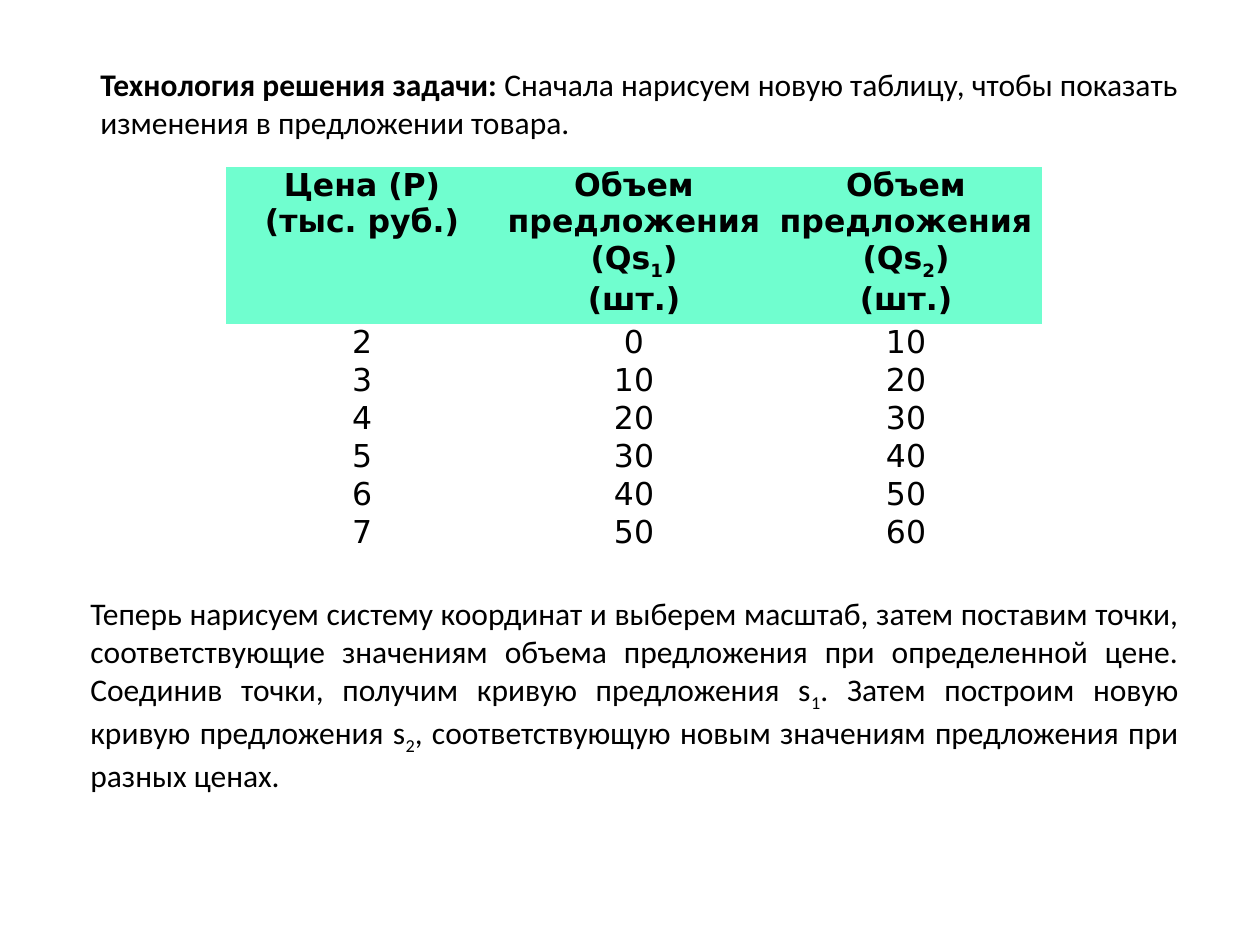
from dataclasses import dataclass

import pptx
import pptx.dml.color
import pptx.enum.text
import pptx.util

PX_PER_INCH = 126
BLACK = pptx.dml.color.RGBColor(0x00, 0x00, 0x00)
MINT = pptx.dml.color.RGBColor(0x70, 0xFE, 0xCF)
ALIGN = pptx.enum.text.PP_ALIGN
TEXT_SIZE = pptx.util.Pt(18)
BODY_FONT = "Calibri"
TABLE_FONT = "DejaVu Sans"
PLAIN_TABLE_STYLE = "{2D5ABB26-0587-4C30-8999-92F81FD0307C}"

TABLE_LEFT, TABLE_TOP = 226, 167
COLUMN_WIDTH, HEADER_HEIGHT, ROW_HEIGHT = 272, 157, 38
SUPPLY_SHIFT = 10


@dataclass(frozen=True)
class Piece:
    text: str
    bold: bool = False
    subscript: bool = False


@dataclass(frozen=True)
class Passage:
    left: int
    top: int
    width: int
    height: int
    align: ALIGN
    pieces: tuple[Piece, ...]


PASSAGES = (
    Passage(88, 59, 1131, 90, ALIGN.LEFT, (
        Piece("Технология решения задачи:\u00a0", bold=True),
        Piece("Сначала нарисуем новую таблицу, чтобы показать "
              "изменения в предложении товара."),
    )),
    Passage(78, 588, 1113, 204, ALIGN.JUSTIFY, (
        Piece("Теперь нарисуем систему координат и выберем масштаб, затем "
              "поставим точки, соответствующие значениям объема предложения "
              "при определенной цене. Соединив точки, получим кривую "
              "предложения s"),
        Piece("1", subscript=True),
        Piece(". Затем построим новую кривую предложения s"),
        Piece("2", subscript=True),
        Piece(", соответствующую новым значениям предложения при "
              "разных ценах."),
    )),
)


def px(length: int) -> int:
    return pptx.util.Emu(round(length * 914400 / PX_PER_INCH))


def write(para, pieces: tuple[Piece, ...], font: str, align: ALIGN) -> None:
    """Add the pieces run by run, with a line break at each newline."""
    para.alignment = align
    for piece in pieces:
        for index, line in enumerate(piece.text.split("\n")):
            if index:
                para.add_line_break()
            span = para.add_run()
            span.text = line
            span.font.name = font
            span.font.size = TEXT_SIZE
            span.font.bold = piece.bold
            span.font.color.rgb = BLACK
            if piece.subscript:
                span._r.get_or_add_rPr().set("baseline", "-25000")


def add_passage(page, passage: Passage) -> None:
    box = page.shapes.add_textbox(px(passage.left), px(passage.top),
                                  px(passage.width), px(passage.height))
    box.text_frame.word_wrap = True
    write(box.text_frame.paragraphs[0], passage.pieces, BODY_FONT, passage.align)


def supply_heading(number: int) -> tuple[Piece, ...]:
    return (Piece("Объем предложения (Qs", bold=True),
            Piece(str(number), bold=True, subscript=True),
            Piece(")\n(шт.)", bold=True))


def supply_rows() -> list[tuple[tuple[Piece, ...], ...]]:
    header = ((Piece("Цена (Р)\n(тыс. руб.)", bold=True),),
              supply_heading(1), supply_heading(2))
    rows = [header]
    for price in range(2, 8):
        supply = (price - 2) * 10
        values = (price, supply, supply + SUPPLY_SHIFT)
        rows.append(tuple((Piece(str(value)),) for value in values))
    return rows


def add_supply_table(page) -> None:
    rows = supply_rows()
    columns = len(rows[0])
    frame = page.shapes.add_table(
        len(rows), columns, px(TABLE_LEFT), px(TABLE_TOP),
        px(COLUMN_WIDTH * columns),
        px(HEADER_HEIGHT + ROW_HEIGHT * (len(rows) - 1)))
    table = frame.table
    table.horz_banding = False
    table.first_row = False
    table._tbl.tblPr.xpath("a:tableStyleId")[0].text = PLAIN_TABLE_STYLE
    for column in table.columns:
        column.width = px(COLUMN_WIDTH)
    for row_index, row in enumerate(rows):
        is_header = row_index == 0
        table.rows[row_index].height = px(HEADER_HEIGHT if is_header else ROW_HEIGHT)
        for column_index, pieces in enumerate(row):
            cell = table.cell(row_index, column_index)
            cell.margin_left = cell.margin_right = 0
            cell.margin_top = cell.margin_bottom = 0
            if is_header:
                cell.fill.solid()
                cell.fill.fore_color.rgb = MINT
            else:
                cell.fill.background()
            write(cell.text_frame.paragraphs[0], pieces, TABLE_FONT, ALIGN.CENTER)


def main() -> None:
    deck = pptx.Presentation()
    deck.slide_width, deck.slide_height = px(1260), px(945)
    page = deck.slides.add_slide(deck.slide_layouts[6])
    opening, closing = PASSAGES
    add_passage(page, opening)
    add_supply_table(page)
    add_passage(page, closing)
    deck.save("out.pptx")


if __name__ == "__main__":
    main()
